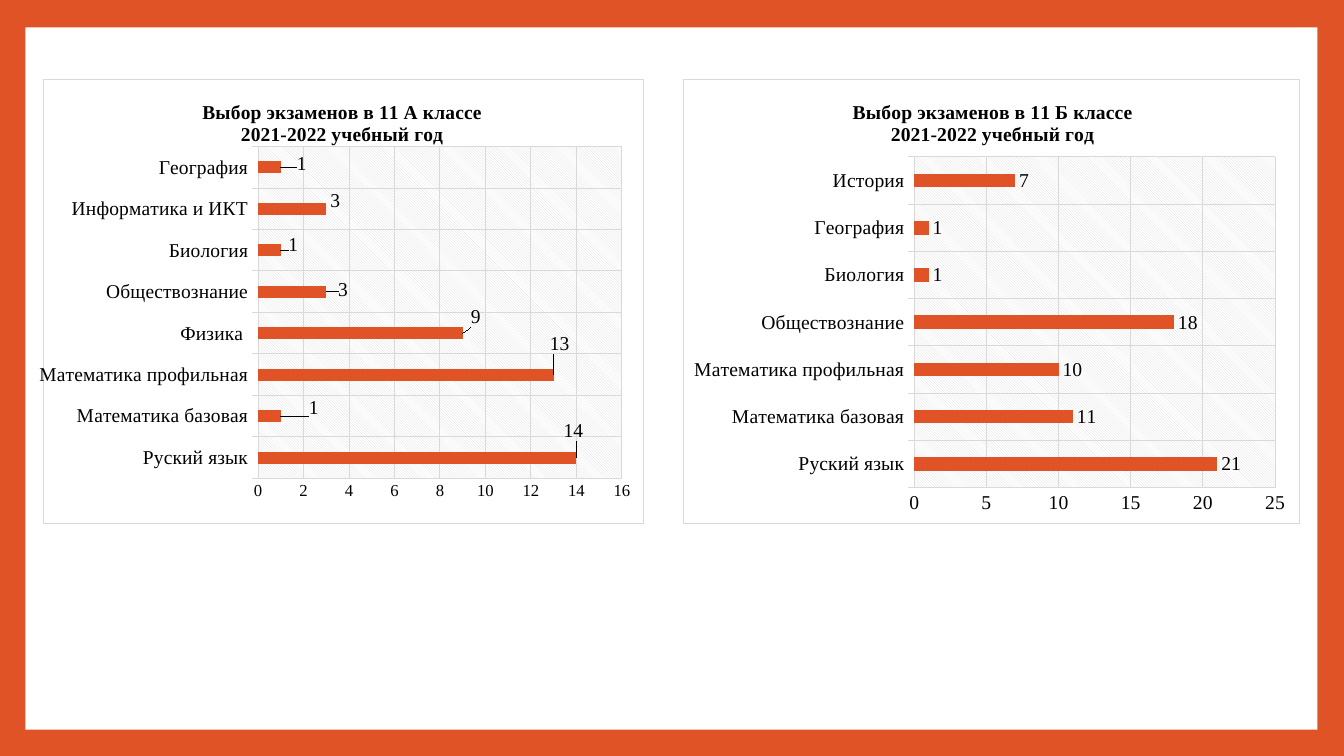
import pptx
import pptx.chart.data
import pptx.dml.color
import pptx.enum.chart
import pptx.enum.shapes
import pptx.oxml
import pptx.oxml.ns
from pptx.util import Cm, Pt

ORANGE = pptx.dml.color.RGBColor(0xDF, 0x53, 0x27)
WHITE = pptx.dml.color.RGBColor(0xFF, 0xFF, 0xFF)
BLACK = pptx.dml.color.RGBColor(0, 0, 0)
GRAY = pptx.dml.color.RGBColor(0xD9, 0xD9, 0xD9)
FONT = "Times New Roman"
NS = pptx.oxml.ns.nsdecls("c", "a")
LABEL_POS = pptx.enum.chart.XL_LABEL_POSITION.OUTSIDE_END

AREA_XML = f"""<c:spPr {NS}>
  <a:solidFill><a:srgbClr val="{WHITE}"/></a:solidFill>
  <a:ln w="9525"><a:solidFill><a:srgbClr val="{GRAY}"/></a:solidFill></a:ln>
</c:spPr>"""
PLOT_XML = f"""<c:spPr {NS}>
  <a:pattFill prst="ltDnDiag">
    <a:fgClr><a:srgbClr val="{GRAY}"/></a:fgClr>
    <a:bgClr><a:srgbClr val="{WHITE}"/></a:bgClr>
  </a:pattFill>
  <a:ln><a:noFill/></a:ln>
</c:spPr>"""

# Layouts are percentages of the chart: title x, y; plot x, y, w, h; label shifts x, y.
CHARTS = [
    dict(
        title="Выбор экзаменов в 11 А классе\n2021-2022 учебный год",
        left=0.99, width=15.24, maximum=16, step=2, value_size=12,
        title_at=(26, 4), plot_at=(35.8, 15.2, 60.6, 74.6),
        exams=[("Руский язык", 14), ("Математика базовая", 1),
               ("Математика профильная", 13), ("Физика ", 9),
               ("Обществознание", 3), ("Биология", 1),
               ("Информатика и ИКТ", 3), ("География", 1)],
        label_shifts=[(-2.8, -6), (4, -1.8), (-1.3, -7), (0.7, -3.8),
                      (1.3, -0.5), (0.6, -1.3), (0, -1.8), (2, -0.9)],
    ),
    dict(
        title="Выбор экзаменов в 11 Б классе\n2021-2022 учебный год",
        left=17.2, width=15.57, maximum=25, step=5, value_size=14,
        title_at=(27, 4), plot_at=(37.5, 17.5, 58.5, 74.4),
        exams=[("Руский язык", 21), ("Математика базовая", 11),
               ("Математика профильная", 10), ("Обществознание", 18),
               ("Биология", 1), ("География", 1), ("История", 7)],
        label_shifts=[],
    ),
]


def set_font(font, size, bold=False):
    font.name = FONT
    font.size = Pt(size)
    font.bold = bold
    font.color.rgb = BLACK


def set_layout(element, index, values, head=""):
    """Place a chart part by x, y (and w, h) in percent; index is the layout's child position."""
    for old in element.findall(pptx.oxml.ns.qn("c:layout")):
        element.remove(old)
    sides = "".join(f'<c:{k} val="{v / 100:.4f}"/>' for k, v in zip("xywh", values))
    element.insert(index, pptx.oxml.parse_xml(
        f"<c:layout {NS}><c:manualLayout>{head}{sides}</c:manualLayout></c:layout>"))


prs = pptx.Presentation()
prs.slide_width, prs.slide_height = Cm(33.87), Cm(19.05)
s = prs.slides.add_slide(prs.slide_layouts[6])
s.background.fill.solid()
s.background.fill.fore_color.rgb = ORANGE

panel = s.shapes.add_shape(pptx.enum.shapes.MSO_SHAPE.RECTANGLE,
                           Cm(0.64), Cm(0.69), Cm(32.56), Cm(17.7))
panel.shadow.inherit = False
panel.fill.solid()
panel.fill.fore_color.rgb = WHITE
panel.line.fill.background()

edge = '<c:xMode val="edge"/><c:yMode val="edge"/>'
for item in CHARTS:
    data = pptx.chart.data.CategoryChartData()
    data.categories = [name for name, count in item["exams"]]
    data.add_series("Series 1", [count for name, count in item["exams"]])
    chart = s.shapes.add_chart(pptx.enum.chart.XL_CHART_TYPE.BAR_CLUSTERED,
                               Cm(item["left"]), Cm(1.98),
                               Cm(item["width"]), Cm(11.23), data).chart
    set_font(chart.font, 14)
    chart.has_legend = False

    chart.has_title = True
    tf = chart.chart_title.text_frame
    tf.text = item["title"]
    for p in tf.paragraphs:
        set_font(p.font, 14, bold=True)
    set_layout(chart.chart_title._element, 1, item["title_at"], edge)

    for axis, size in ((chart.category_axis, 14), (chart.value_axis, item["value_size"])):
        set_font(axis.tick_labels.font, size)
        axis.has_major_gridlines = True
        for line in (axis.format.line, axis.major_gridlines.format.line):
            line.color.rgb = GRAY
            line.width = Pt(0.75)
    chart.value_axis.format.line.fill.background()
    chart.value_axis.major_tick_mark = pptx.enum.chart.XL_TICK_MARK.NONE
    chart.value_axis.minimum_scale = 0
    chart.value_axis.maximum_scale = item["maximum"]
    chart.value_axis.major_unit = item["step"]

    plot = chart.plots[0]
    plot.gap_width = 247
    plot.vary_by_categories = False
    series = plot.series[0]
    series.format.fill.solid()
    series.format.fill.fore_color.rgb = ORANGE
    series.data_labels.show_value = True
    series.data_labels.position = LABEL_POS
    set_font(series.data_labels.font, 14)
    for i, shift in enumerate(item["label_shifts"]):
        label = series.points[i].data_label
        set_font(label.font, 14)
        label.position = LABEL_POS
        dlbl = series.data_labels._element.findall(pptx.oxml.ns.qn("c:dLbl"))[i]
        set_layout(dlbl, 1, shift)

    chart_xml = chart._chartSpace.chart
    chart_xml.addnext(pptx.oxml.parse_xml(AREA_XML))
    plot_area = chart_xml.plotArea
    plot_area.append(pptx.oxml.parse_xml(PLOT_XML))
    set_layout(plot_area, 0, item["plot_at"], '<c:layoutTarget val="inner"/>' + edge)

prs.save("out.pptx")
